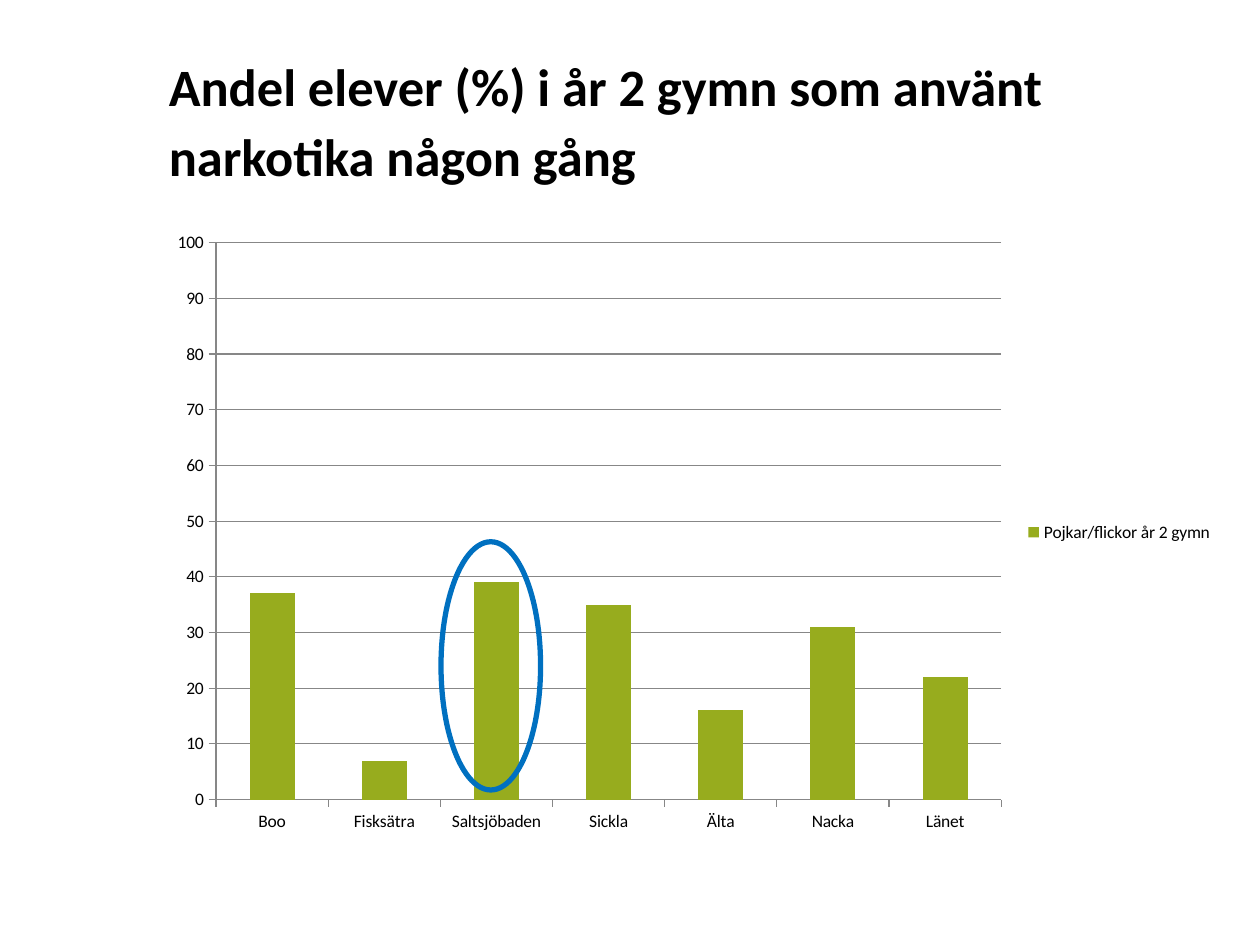
from pptx import Presentation
from pptx.chart.data import CategoryChartData
from pptx.dml.color import RGBColor
from pptx.enum.chart import XL_CHART_TYPE, XL_LEGEND_POSITION, XL_TICK_MARK
from pptx.enum.shapes import MSO_SHAPE
from pptx.enum.text import MSO_ANCHOR, MSO_AUTO_SIZE, PP_ALIGN
from pptx.util import Pt

COLUMN = XL_CHART_TYPE.COLUMN_CLUSTERED
RIGHT = XL_LEGEND_POSITION.RIGHT
OUTSIDE = XL_TICK_MARK.OUTSIDE
OVAL = MSO_SHAPE.OVAL
MIDDLE = MSO_ANCHOR.MIDDLE
NO_FIT = MSO_AUTO_SIZE.NONE
LEFT = PP_ALIGN.LEFT

TITLE = "Andel elever (%) i år 2 gymn som använt narkotika någon gång"
SERIES = "Pojkar/flickor år 2 gymn"
SHARES = {
    "Boo": 37,
    "Fisksätra": 7,
    "Saltsjöbaden": 39,
    "Sickla": 35,
    "Älta": 16,
    "Nacka": 31,
    "Länet": 22,
}
COLORS = {"text": "000000", "bar": "97AC1E", "ring": "0070C0", "axis": "878787"}
FONT = "Calibri"
MARGIN, WIDTH = 89.28, 611.28
BOXES = {
    "title": (MARGIN, 21.6, WIDTH, 90),
    "chart": (MARGIN, 126, WIDTH, 356.4),
    "ring": (252, 309.6, 56.88, 141.84),
}


def color(name):
    return RGBColor.from_string(COLORS[name])


def box(name):
    return [Pt(v) for v in BOXES[name]]


def apply(obj, values):
    for name, value in values.items():
        setattr(obj, name, value)


def style_font(font, size, bold):
    apply(font, {"name": FONT, "size": Pt(size), "bold": bold})
    font.color.rgb = color("text")


def style_line(line, name, width):
    line.color.rgb = color(name)
    line.width = Pt(width)


def add_title(slide):
    sp = slide.shapes.title
    apply(sp, dict(zip(("left", "top", "width", "height"), box("title"))))
    tf = sp.text_frame
    apply(tf, {"word_wrap": True, "auto_size": NO_FIT, "vertical_anchor": MIDDLE})
    p = tf.paragraphs[0]
    apply(p, {"alignment": LEFT, "line_spacing": Pt(40)})
    r = p.add_run()
    r.text = TITLE
    style_font(r.font, 30, True)


def add_share_chart(slide):
    data = CategoryChartData()
    data.categories = list(SHARES)
    data.add_series(SERIES, list(SHARES.values()))
    chart = slide.shapes.add_chart(COLUMN, *box("chart"), data).chart
    apply(chart, {"has_title": False, "has_legend": True})
    apply(chart.legend, {"position": RIGHT, "include_in_layout": False})
    style_font(chart.font, 10, False)

    plot = chart.plots[0]
    apply(plot, {"gap_width": 150, "vary_by_categories": False})
    fill = plot.series[0].format.fill
    fill.solid()
    fill.fore_color.rgb = color("bar")

    value_axis = chart.value_axis
    apply(value_axis, {"minimum_scale": 0, "maximum_scale": 100, "major_unit": 10,
                       "has_major_gridlines": True})
    for axis in (chart.category_axis, value_axis):
        axis.major_tick_mark = OUTSIDE
        style_line(axis.format.line, "axis", 0.75)
    style_line(value_axis.major_gridlines.format.line, "axis", 0.75)


def add_ring(slide):
    sp = slide.shapes.add_shape(OVAL, *box("ring"))
    sp.shadow.inherit = False
    sp.fill.background()
    style_line(sp.line, "ring", 3)


def main():
    prs = Presentation()
    apply(prs, {"slide_width": Pt(720), "slide_height": Pt(540)})
    s = prs.slides.add_slide(prs.slide_layouts[5])
    add_title(s)
    add_share_chart(s)
    add_ring(s)
    prs.save("out.pptx")


if __name__ == "__main__":
    main()
